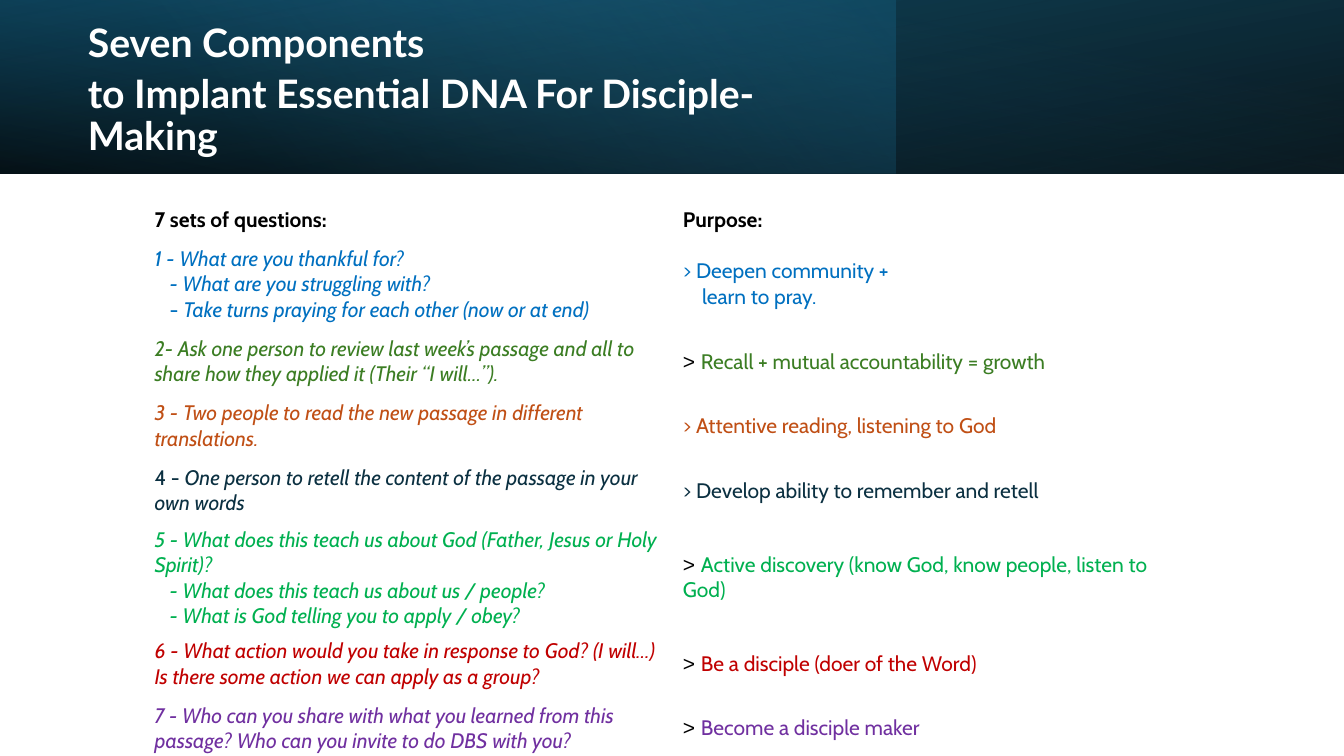
"""Build a slide that pairs seven sets of questions with their purpose."""
from pptx import Presentation
from pptx.dml.color import RGBColor
from pptx.enum.shapes import MSO_SHAPE
from pptx.enum.text import MSO_ANCHOR
from pptx.oxml import parse_xml
from pptx.oxml.ns import nsdecls
from pptx.util import Inches, Pt

WHITE = RGBColor(0xFF, 0xFF, 0xFF)
BLACK = RGBColor(0x00, 0x00, 0x00)
BLUE = RGBColor(0x00, 0x70, 0xC0)
OLIVE = RGBColor(0x3B, 0x7D, 0x23)
RUST = RGBColor(0xC0, 0x4F, 0x15)
NAVY = RGBColor(0x0B, 0x30, 0x41)
GREEN = RGBColor(0x00, 0xB0, 0x50)
RED = RGBColor(0xC0, 0x00, 0x00)
PURPLE = RGBColor(0x70, 0x30, 0xA0)
TEAL = RGBColor(0x15, 0x60, 0x82)
DEEP = RGBColor(0x10, 0x48, 0x62)
SKY = RGBColor(0x46, 0xB1, 0xE1)

deck = Presentation()
deck.slide_width, deck.slide_height = Inches(13.33), Inches(7.5)
WIDE, HIGH = deck.slide_width, deck.slide_height
BAND = int(HIGH * 0.23)
slide = deck.slides.add_slide(deck.slide_layouts[6])


def shade(stops, angle):
    """Return a gradient fill with see-through stops."""
    marks = "".join(
        f'<a:gs pos="{spot * 1000}"><a:srgbClr val="{tone}">'
        f'<a:alpha val="{alpha * 1000}"/></a:srgbClr></a:gs>'
        for spot, tone, alpha in stops)
    return parse_xml(
        f'<a:gradFill {nsdecls("a")} rotWithShape="1"><a:gsLst>{marks}</a:gsLst>'
        f'<a:lin ang="{angle * 60000}" scaled="0"/></a:gradFill>')


def write(para, text, tone, **form):
    """Add a run in one colour with the given font values."""
    run = para.add_run()
    run.text = text
    run.font.color.rgb = tone
    for key, value in form.items():
        setattr(run.font, key, value)


layers = [
    (1, 180, True, 100, [(0, BLACK, 96), (100, DEEP, 100)]),
    (2 / 3, 0, False, 140, [(0, TEAL, 41), (74, SKY, 0)]),
    (1, 0, True, 260, [(0, BLACK, 63), (78, TEAL, 15)]),
]
for share, turn, flip, angle, stops in layers:
    panel = slide.shapes.add_shape(
        MSO_SHAPE.RECTANGLE, 0, 0, int(WIDE * share), BAND)
    panel.rotation = turn
    panel.shadow.inherit = False
    panel.line.fill.background()
    props = panel.element.spPr
    props.insert(2, shade(stops, angle))
    if flip:
        props.xfrm.set("flipH", "1")

title = slide.shapes.add_textbox(
    int(WIDE * 0.058), int(HIGH * 0.036), int(WIDE * 0.579), int(HIGH * 0.17))
frame = title.text_frame
frame.word_wrap = True
frame.vertical_anchor = MSO_ANCHOR.MIDDLE
heads = ["Seven Components", "to Implant Essential DNA For Disciple-Making"]
for place, head in enumerate(heads):
    para = frame.paragraphs[0] if place == 0 else frame.add_paragraph()
    para.line_spacing, para.space_after = 0.9, Pt(6)
    write(para, head, WHITE, name="Lato", size=Pt(28), bold=True)

topics = [
    (BLACK, 0.38, ["7 sets of questions:"], ["Purpose:"]),
    (BLUE, 0.9, ["1 - What are you thankful for?",
                 "- What are you struggling with?",
                 "- |Take turns praying for each other (now or at end)"],
     ["> Deepen community +", "learn to pray."]),
    (OLIVE, 0.64, ["2- Ask one person to review last week’s passage and all to "
                   "share how they applied it (Their “I will…”)."],
     ["> |Recall + mutual accountability = growth"]),
    (RUST, 0.64, ["3 - Two people to read the new passage in different translations."],
     ["> Attentive reading, listening to God"]),
    (NAVY, 0.64, ["4 - |One person to retell the content of the passage in your own words"],
     ["> Develop ability to remember and retell"]),
    (GREEN, 0.9, ["5 - What does this teach us about God (Father, Jesus or Holy Spirit)?",
                  "- What does this teach us about us / people?",
                  "- What is God telling you to apply / obey?"],
     ["> |Active discovery (know God, know people, listen to God)"]),
    (RED, 0.64, ["6 - What action would you take in response to God? (I will…) "
                 "Is there some action we can apply as a group?"],
     ["> |Be a disciple (doer of the Word)"]),
    (PURPLE, 0.64, ["7 - Who can you share with what you learned from this passage? "
                    "Who can you invite to do DBS with you?"],
     ["> |Become a disciple maker"]),
]
grid = slide.shapes.add_table(
    len(topics), 2, int(WIDE * 0.109), int(HIGH * 0.265),
    int(WIDE * 0.782), int(HIGH * 0.72)).table
grid.first_row = grid.horz_banding = False
grid.columns[0].width, grid.columns[1].width = Inches(5.24), Inches(5.18)
layout = {"margin_left": Inches(0.08), "margin_right": Inches(0.08),
          "margin_top": Inches(0.04), "margin_bottom": Inches(0.04),
          "vertical_anchor": MSO_ANCHOR.MIDDLE}
insets = (0.15, 0.19)

for row, (tone, tall, *sides) in enumerate(topics):
    grid.rows[row].height = Inches(tall)
    for col, lines in enumerate(sides):
        cell = grid.cell(row, col)
        cell.fill.background()
        for key, value in layout.items():
            setattr(cell, key, value)
        form = {"name": "Cabin", "size": Pt(15), "bold": row == 0,
                "italic": row > 0 and col == 0}
        for place, line in enumerate(lines):
            box = cell.text_frame
            para = box.paragraphs[0] if place == 0 else box.add_paragraph()
            if place:
                para._p.get_or_add_pPr().set("marL", str(Inches(insets[col])))
            lead, bar, rest = line.rpartition("|")
            if bar and col:
                write(para, lead, BLACK, **{**form, "name": "Arial"})
            elif bar:
                write(para, lead, tone, **{**form, "italic": False})
            write(para, rest, tone, **form)

deck.save("out.pptx")
